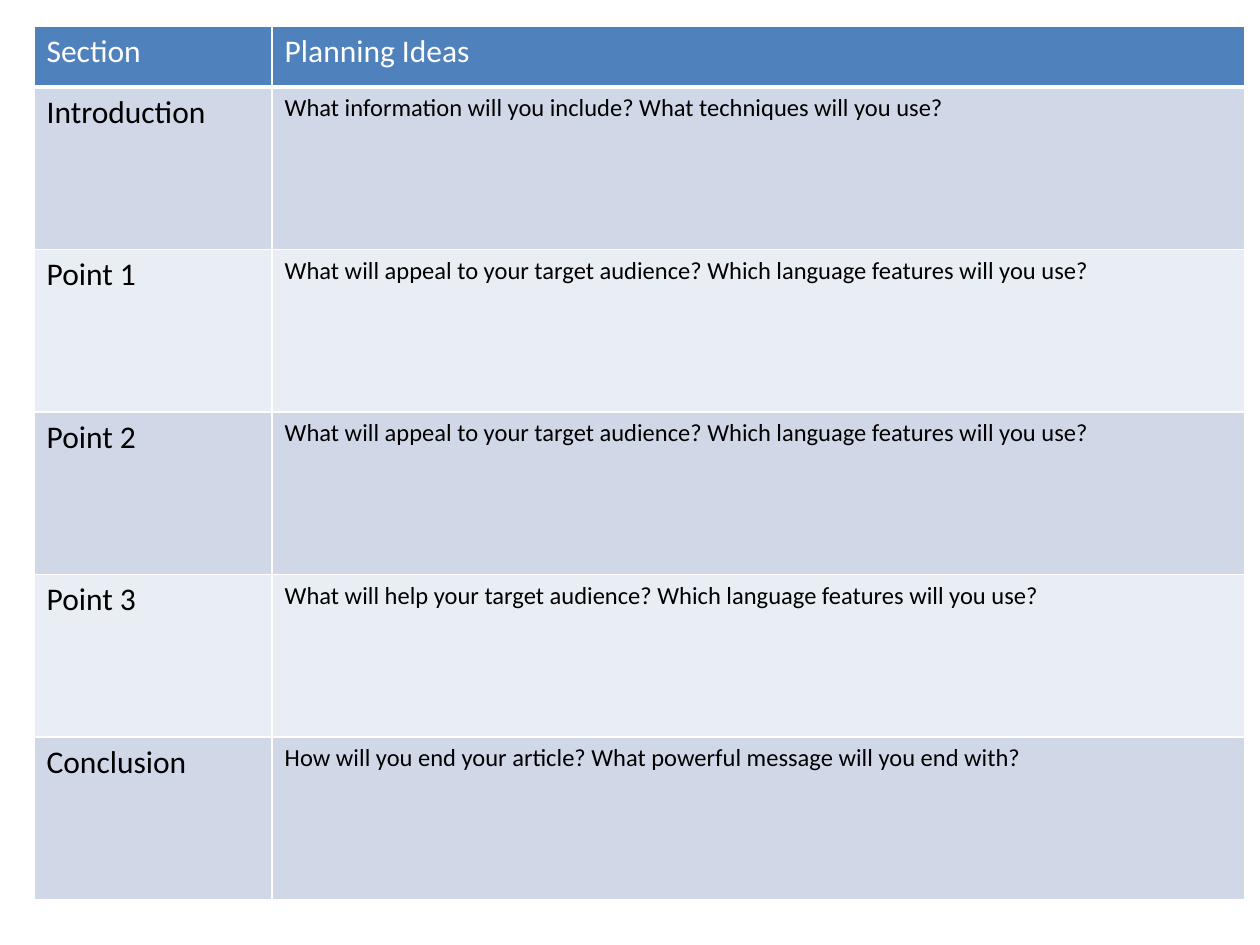
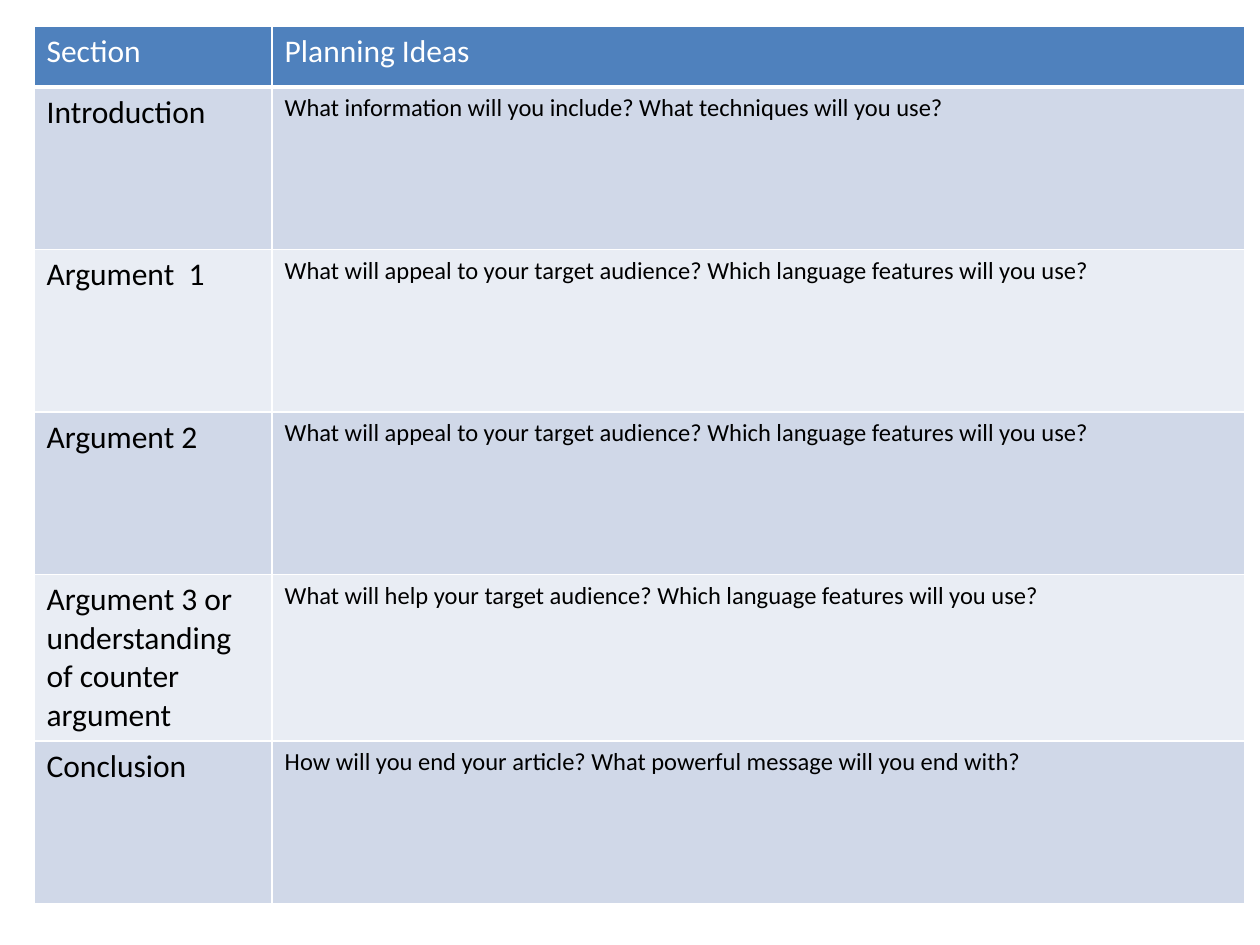
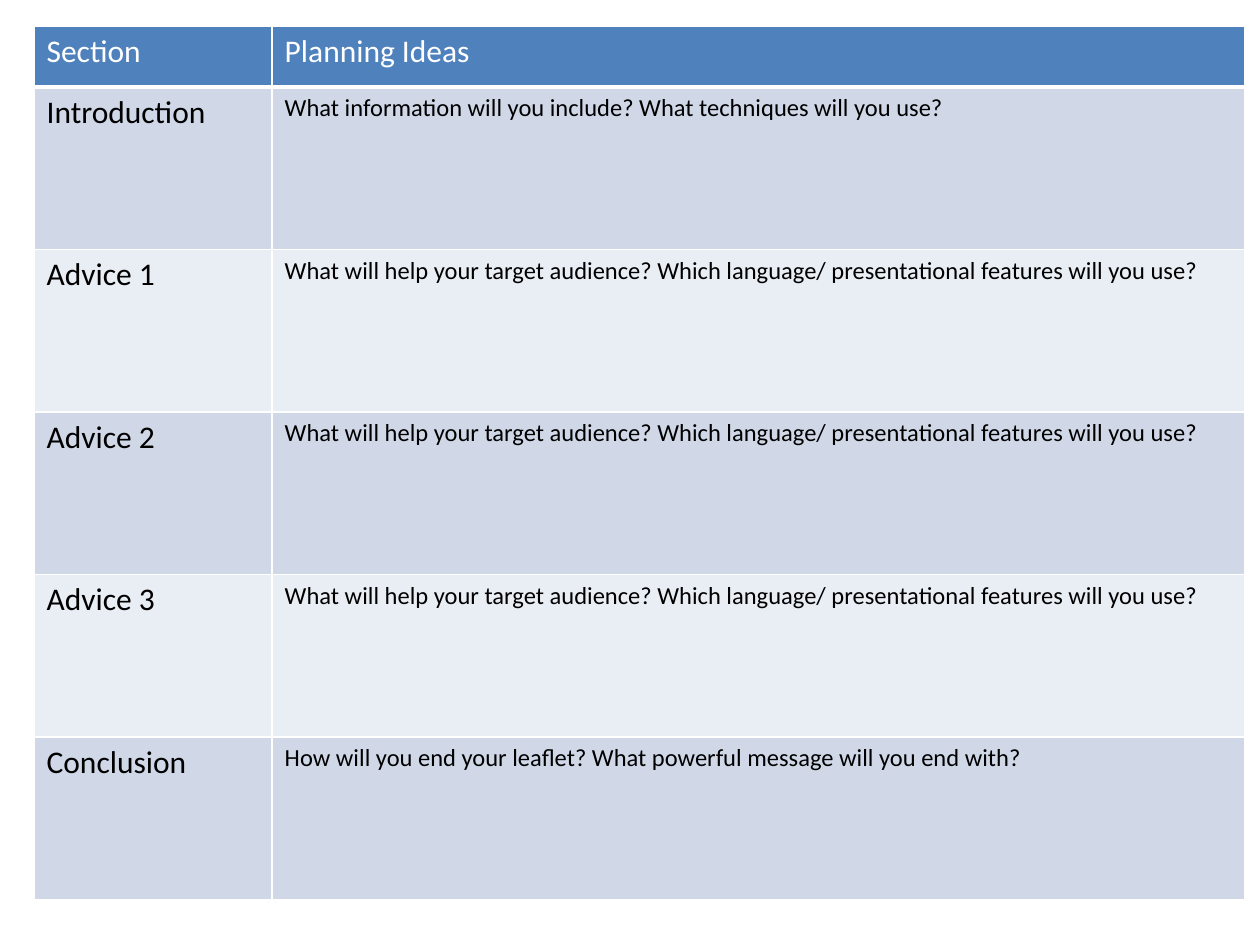
import dataclasses

import lxml.etree
import pptx
import pptx.dml.color
import pptx.oxml.ns
import pptx.presentation
import pptx.table
import pptx.util

WHITE = pptx.dml.color.RGBColor(0xFF, 0xFF, 0xFF)
BLACK = pptx.dml.color.RGBColor(0x00, 0x00, 0x00)
HEADING_BLUE = pptx.dml.color.RGBColor(0x4F, 0x81, 0xBD)
BANDS = (
    pptx.dml.color.RGBColor(0xD0, 0xD8, 0xE8),
    pptx.dml.color.RGBColor(0xE9, 0xED, 0xF4),
)

SLIDE_WIDTH = pptx.util.Inches(10)
SLIDE_HEIGHT = pptx.util.Inches(7.5)
LEFT = pptx.util.Inches(0.27)
TOP = pptx.util.Inches(0.21)
COLUMN_WIDTHS = (pptx.util.Inches(1.89), pptx.util.Inches(7.72))
HEADING_HEIGHT = pptx.util.Inches(0.48)
SECTION_HEIGHT = pptx.util.Inches(1.29)

LABEL_SIZE = pptx.util.Pt(18)
PROMPT_SIZE = pptx.util.Pt(14)
RULE = pptx.util.Pt(1)
HEADING_RULE = pptx.util.Pt(3)

HEADINGS = ("Section", "Planning Ideas")
OPENING = "What information will you include? What techniques will you use?"
APPEAL = "What will appeal to your target audience? Which language features will you use?"
HELP = "What will help your target audience? Which language features will you use?"
LEAFLET_HELP = (
    "What will help your target audience? "
    "Which language/ presentational features will you use?"
)


@dataclasses.dataclass(frozen=True)
class Plan:
    text_type: str
    points: tuple[tuple[str, str], ...]

    def sections(self) -> list[tuple[str, str]]:
        ending = (
            f"How will you end your {self.text_type}? "
            "What powerful message will you end with?"
        )
        return [("Introduction", OPENING), *self.points, ("Conclusion", ending)]


@dataclasses.dataclass(frozen=True)
class CellStyle:
    fill: pptx.dml.color.RGBColor
    ink: pptx.dml.color.RGBColor
    size: pptx.util.Length
    bottom_rule: pptx.util.Length = RULE


PLANS = (
    Plan("article", (("Point 1", APPEAL), ("Point 2", APPEAL), ("Point 3", HELP))),
    Plan(
        "article",
        (
            ("Argument  1", APPEAL),
            ("Argument 2", APPEAL),
            ("Argument 3 or understanding of counter argument", HELP),
        ),
    ),
    Plan("leaflet", tuple((f"Advice {number}", LEAFLET_HELP) for number in (1, 2, 3))),
)


def rule_cell(cell: pptx.table._Cell, bottom_rule: pptx.util.Length) -> None:
    properties = cell._tc.get_or_add_tcPr()
    qn = pptx.oxml.ns.qn
    widths = {"lnL": RULE, "lnR": RULE, "lnT": RULE, "lnB": bottom_rule}
    for side, width in widths.items():
        edge = lxml.etree.SubElement(properties, qn(f"a:{side}"), w=str(int(width)))
        paint = lxml.etree.SubElement(edge, qn("a:solidFill"))
        lxml.etree.SubElement(paint, qn("a:srgbClr"), val=str(WHITE))


def write_cell(cell: pptx.table._Cell, wording: str, style: CellStyle) -> None:
    rule_cell(cell, style.bottom_rule)
    cell.fill.solid()
    cell.fill.fore_color.rgb = style.fill
    cell.text = wording
    font = cell.text_frame.paragraphs[0].runs[0].font
    for attribute, value in {"name": "Calibri", "size": style.size, "bold": False}.items():
        setattr(font, attribute, value)
    font.color.rgb = style.ink


def add_plan(deck: pptx.presentation.Presentation, plan: Plan) -> None:
    slide = deck.slides.add_slide(deck.slide_layouts.get_by_name("Blank"))
    sections = plan.sections()
    planner = slide.shapes.add_table(
        len(sections) + 1,
        len(HEADINGS),
        LEFT,
        TOP,
        sum(COLUMN_WIDTHS),
        HEADING_HEIGHT + SECTION_HEIGHT * len(sections),
    ).table
    for column, width in zip(planner.columns, COLUMN_WIDTHS):
        column.width = width
    planner.rows[0].height = HEADING_HEIGHT

    heading_style = CellStyle(HEADING_BLUE, WHITE, LABEL_SIZE, HEADING_RULE)
    for column, heading in enumerate(HEADINGS):
        write_cell(planner.cell(0, column), heading, heading_style)

    for row, (label, prompt) in enumerate(sections, start=1):
        planner.rows[row].height = SECTION_HEIGHT
        band = BANDS[(row - 1) % len(BANDS)]
        write_cell(planner.cell(row, 0), label, CellStyle(band, BLACK, LABEL_SIZE))
        write_cell(planner.cell(row, 1), prompt, CellStyle(band, BLACK, PROMPT_SIZE))


def main() -> None:
    deck = pptx.Presentation()
    deck.slide_width = SLIDE_WIDTH
    deck.slide_height = SLIDE_HEIGHT
    for plan in PLANS:
        add_plan(deck, plan)
    deck.save("out.pptx")


if __name__ == "__main__":
    main()
